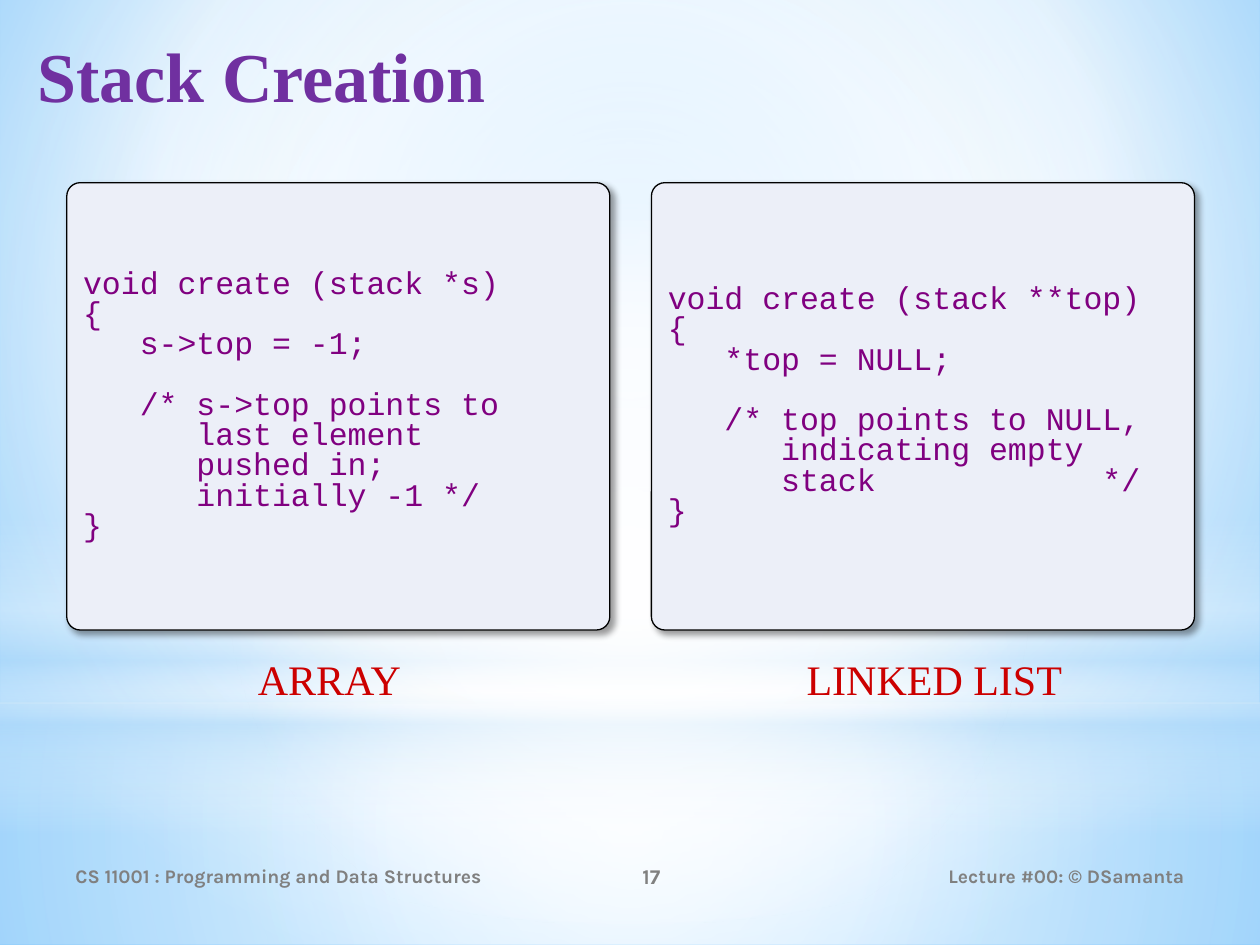
"""Build the Stack Creation slide comparing array and linked list code."""
import pptx
import pptx.dml.color
import pptx.enum.shapes
import pptx.enum.text
import pptx.oxml
import pptx.oxml.ns
import pptx.util

Inches = pptx.util.Inches
Pt = pptx.util.Pt
Shape = pptx.enum.shapes.MSO_SHAPE
Align = pptx.enum.text.PP_ALIGN
Anchor = pptx.enum.text.MSO_ANCHOR
qn = pptx.oxml.ns.qn
NAMESPACE = pptx.oxml.ns.nsdecls("a")


def set_gradient(holder, stops, center=None):
    """Replace the empty fill of holder by a radial or vertical gradient."""
    stop_xml = "".join(
        f'<a:gs pos="{place * 1000}"><a:srgbClr val="{color}">'
        f'<a:alpha val="{opacity * 1000}"/></a:srgbClr></a:gs>'
        for place, color, opacity in stops)
    direction = '<a:lin ang="5400000" scaled="0"/>'
    if center:
        left, top, right, bottom = [value * 1000 for value in center]
        direction = (f'<a:path path="circle"><a:fillToRect l="{left}" t="{top}" '
                     f'r="{right}" b="{bottom}"/></a:path>')
    gradient = pptx.oxml.parse_xml(
        f'<a:gradFill {NAMESPACE} rotWithShape="1"><a:gsLst>{stop_xml}</a:gsLst>'
        f'{direction}</a:gradFill>')
    holder.replace(holder.find(qn("a:noFill")), gradient)


def write(shape, lines, font, size, color, bold=False, align=Align.LEFT,
          anchor=Anchor.TOP, spacing=None):
    """Write one paragraph per line into shape."""
    frame = shape.text_frame
    frame.word_wrap = True
    frame.vertical_anchor = anchor
    for index, line in enumerate(lines):
        para = frame.add_paragraph() if index else frame.paragraphs[0]
        para.alignment = align
        para.line_spacing = spacing
        span = para.add_run()
        span.text = line
        span.font.name = font
        span.font.size = Pt(size)
        span.font.bold = bold
        span.font.color.rgb = pptx.dml.color.RGBColor.from_string(color)


deck = pptx.Presentation()
deck.slide_width = Inches(10)
deck.slide_height = Inches(7.5)
slide = deck.slides.add_slide(deck.slide_layouts[5])
shapes = slide.shapes

slide.background.fill.background()
set_gradient(slide._element.find(".//" + qn("p:bgPr")),
             [(0, "9ED5FF", 100), (60, "FFFFFF", 100), (100, "5BB9FF", 100)],
             (20, 10, 20, 60))

middle = (50, 50, 50, 50)
glows = [
    (Shape.RECTANGLE, 5.58, 1.92, middle,
     [(0, "FFFFFF", 91), (37, "FFFFFF", 76), (100, "B4DCFA", 79)]),
    (Shape.RECTANGLE, 0, 5.58, middle,
     [(0, "FFFFFF", 89), (48, "FFFFFF", 62), (100, "B4DCFA", 79)]),
    (Shape.RECTANGLE, 4.12, 2.5, None,
     [(0, "FFFFFF", 0), (29, "FFFFFF", 30), (45, "B4DCFA", 40),
      (55, "FFFFFF", 26), (65, "B4DCFA", 60), (100, "FFFFFF", 0)]),
    (Shape.OVAL, 1.75, 5.58, middle,
     [(0, "FFFFFF", 100), (56, "FFFFFF", 0)]),
]
for kind, top, height, center, stops in glows:
    glow = shapes.add_shape(kind, 0, Inches(top), Inches(10), Inches(height))
    glow.shadow.inherit = False
    glow.line.fill.background()
    glow.fill.background()
    set_gradient(glow._element.spPr, stops, center)

title = shapes.title
shapes._spTree.append(title._element)
title.left, title.top = Inches(0.2), Inches(0.21)
title.width, title.height = Inches(9.53), Inches(1.25)
title.text_frame.auto_size = pptx.enum.text.MSO_AUTO_SIZE.NONE
write(title, ["Stack Creation"], "Times New Roman", 40, "7030A0", bold=True)

footers = [
    ("CS 11001 : Programming and Data Structures", 0.5, 3.67, 11, Align.LEFT),
    ("17", 4.17, 2, 12, Align.CENTER),
    ("Lecture #00: © DSamanta", 6.75, 2.75, 11, Align.RIGHT),
]
for text, left, width, size, align in footers:
    footer = shapes.add_textbox(Inches(left), Inches(6.75), Inches(width), Inches(0.4))
    write(footer, [text], "Karla", size, "808080", True, align, Anchor.MIDDLE)

array_code = """void create (stack *s)
{
   s->top = -1;

   /* s->top points to
      last element
      pushed in;
      initially -1 */
}"""
list_code = """void create (stack **top)
{
   *top = NULL;

   /* top points to NULL,
      indicating empty
      stack            */
}"""
panels = [
    (0.53, array_code, "ARRAY", 1.7, 1.83),
    (5.17, list_code, "LINKED LIST", 5.83, 3.17),
]
for left, code, caption, caption_left, caption_width in panels:
    panel = shapes.add_shape(Shape.ROUNDED_RECTANGLE, Inches(left), Inches(1.45),
                             Inches(4.31), Inches(3.55))
    panel.adjustments[0] = 0.03
    panel.fill.solid()
    panel.fill.fore_color.rgb = pptx.dml.color.RGBColor.from_string("ECEFF8")
    panel.line.color.rgb = pptx.dml.color.RGBColor.from_string("000000")
    panel.line.width = Pt(0.75)
    panel.shadow.inherit = False
    panel._element.spPr.find(qn("a:effectLst")).append(pptx.oxml.parse_xml(
        f'<a:outerShdw {NAMESPACE} blurRad="{Pt(4)}" dist="{Pt(3)}" dir="2700000" '
        'algn="tl" rotWithShape="0"><a:srgbClr val="000000">'
        '<a:alpha val="40000"/></a:srgbClr></a:outerShdw>'))
    write(panel, code.split("\n"), "Courier New", 18, "800080",
          anchor=Anchor.MIDDLE, spacing=0.8)

    label = shapes.add_textbox(Inches(caption_left), Inches(5.14),
                               Inches(caption_width), Inches(0.5))
    write(label, [caption], "Times New Roman", 24, "CC0000", align=Align.CENTER)

deck.save("out.pptx")
